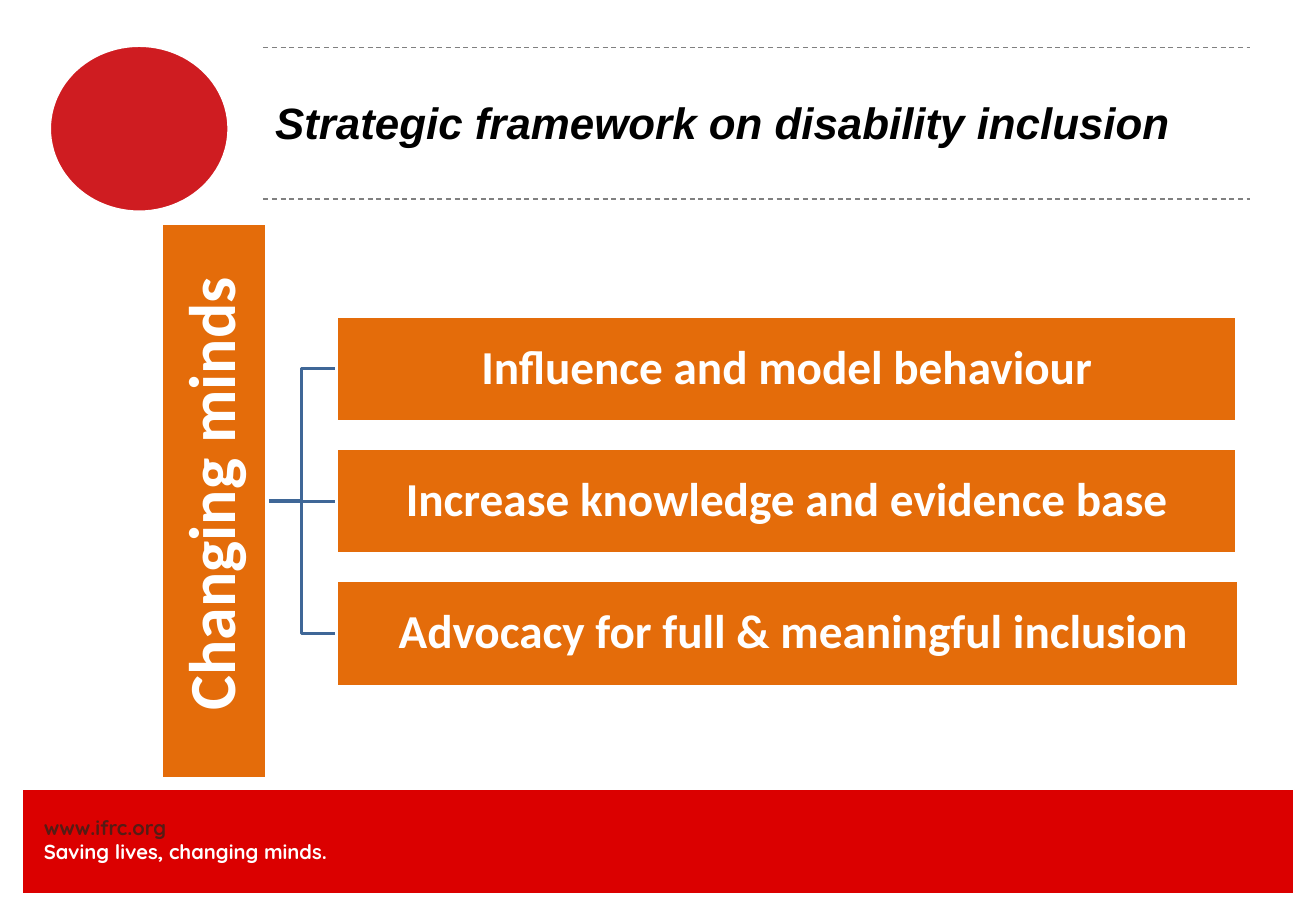
import pptx
import pptx.dml.color
import pptx.enum.dml
import pptx.enum.shapes
import pptx.enum.text
import pptx.oxml
import pptx.oxml.ns
import pptx.util

Pt = pptx.util.Pt
SHAPE = pptx.enum.shapes.MSO_SHAPE
LINK = pptx.enum.shapes.MSO_CONNECTOR
ALIGN = pptx.enum.text.PP_ALIGN
MIDDLE = pptx.enum.text.MSO_ANCHOR.MIDDLE
DASH = pptx.enum.dml.MSO_LINE.DASH

WHITE = "FFFFFF"
ORANGE = "E46C0A"
BLUE = "3F6797"
GOALS = [
    ("Influence and model behaviour", 533.5, 0),
    ("Increase knowledge and evidence base", 533.5, 0),
    ("Advocacy for full & meaningful inclusion", 535, 6.4),
]
BAR = 62.6
PITCH = 78.5
TOP = 187.3
TALL = 329


def paint(item, color):
    item.rgb = pptx.dml.color.RGBColor.from_string(color)


def add_block(slide, kind, place, fill, width):
    shape = slide.shapes.add_shape(kind, *map(Pt, place))
    shape.shadow.inherit = False
    shape.fill.solid()
    paint(shape.fill.fore_color, fill)
    paint(shape.line.color, WHITE)
    shape.line.width = Pt(width)
    return shape


def set_frame(frame, inset):
    frame.word_wrap = True
    frame.margin_left = frame.margin_right = Pt(inset)
    frame.margin_top = frame.margin_bottom = Pt(inset)


def set_font(para, name, size, color, italic=None):
    font = para.font
    font.name = name
    font.size = Pt(size)
    font.bold = True
    font.italic = italic
    paint(font.color, color)


def add_label(slide, place, text, size, indent=0):
    shape = add_block(slide, SHAPE.RECTANGLE, place, ORANGE, 2)
    frame = shape.text_frame
    set_frame(frame, 1.5)
    frame.vertical_anchor = MIDDLE
    para = frame.paragraphs[0]
    para.text = text
    para.alignment = ALIGN.CENTER
    para.line_spacing = 0.9
    if indent:
        para._p.get_or_add_pPr().set("marL", str(Pt(indent)))
    set_font(para, "Calibri", size, WHITE)
    return shape


def add_line(slide, kind, ends, color, width):
    line = slide.shapes.add_connector(kind, *map(Pt, ends))
    paint(line.line.color, color)
    line.line.width = Pt(width)
    props = line._element.spPr
    props.append(pptx.oxml.parse_xml(
        "<a:effectLst %s/>" % pptx.oxml.ns.nsdecls("a")))
    return line


def add_footer(slide):
    add_block(slide, SHAPE.RECTANGLE, (13, 468, 754, 62), "DB0000", 0.75)
    box = slide.shapes.add_textbox(Pt(26), Pt(483), Pt(266), Pt(29))
    frame = box.text_frame
    set_frame(frame, 0)
    frame.text = "www.ifrc.org\nSaving lives, changing minds."
    for para, color in zip(frame.paragraphs, ("551C15", WHITE)):
        set_font(para, "Quicksand", 12, color)


def add_header(slide):
    add_block(slide, SHAPE.OVAL, (29, 26.6, 107, 99.4), "CF1C21", 2.5)
    for y in (28, 118):
        line = add_line(slide, LINK.STRAIGHT, (156, y, 741, y), "808080", 0.75)
        line.line.dash_style = DASH
    box = slide.shapes.add_textbox(Pt(156), Pt(27.4), Pt(585), Pt(90))
    frame = box.text_frame
    frame.word_wrap = True
    frame.vertical_anchor = MIDDLE
    para = frame.paragraphs[0]
    para.text = "Strategic framework on disability inclusion"
    set_font(para, "Arial", 26, "000000", True)


def add_tree(slide):
    mid = TOP + PITCH + BAR / 2
    links = []
    for row in range(len(GOALS)):
        y = TOP + row * PITCH + BAR / 2
        kind = LINK.STRAIGHT if row == 1 else LINK.ELBOW
        links.append(add_line(slide, kind, (158.4, mid, 199.4, y), BLUE, 2))
    root = add_label(slide, (95.8, mid - TALL / 2, BAR, TALL),
                     "Changing minds", 39, 8.8)
    root.text_frame._txBody.bodyPr.set("vert", "vert270")
    for row, (text, width, indent) in enumerate(GOALS):
        place = (199.4, TOP + row * PITCH, width, BAR)
        goal = add_label(slide, place, text, 28, indent)
        links[row].begin_connect(root, 3)
        links[row].end_connect(goal, 1)


def main():
    deck = pptx.Presentation()
    deck.slide_width = Pt(780)
    deck.slide_height = Pt(540)
    slide = deck.slides.add_slide(deck.slide_layouts[6])
    add_footer(slide)
    add_header(slide)
    add_tree(slide)
    deck.save("out.pptx")


if __name__ == "__main__":
    main()
